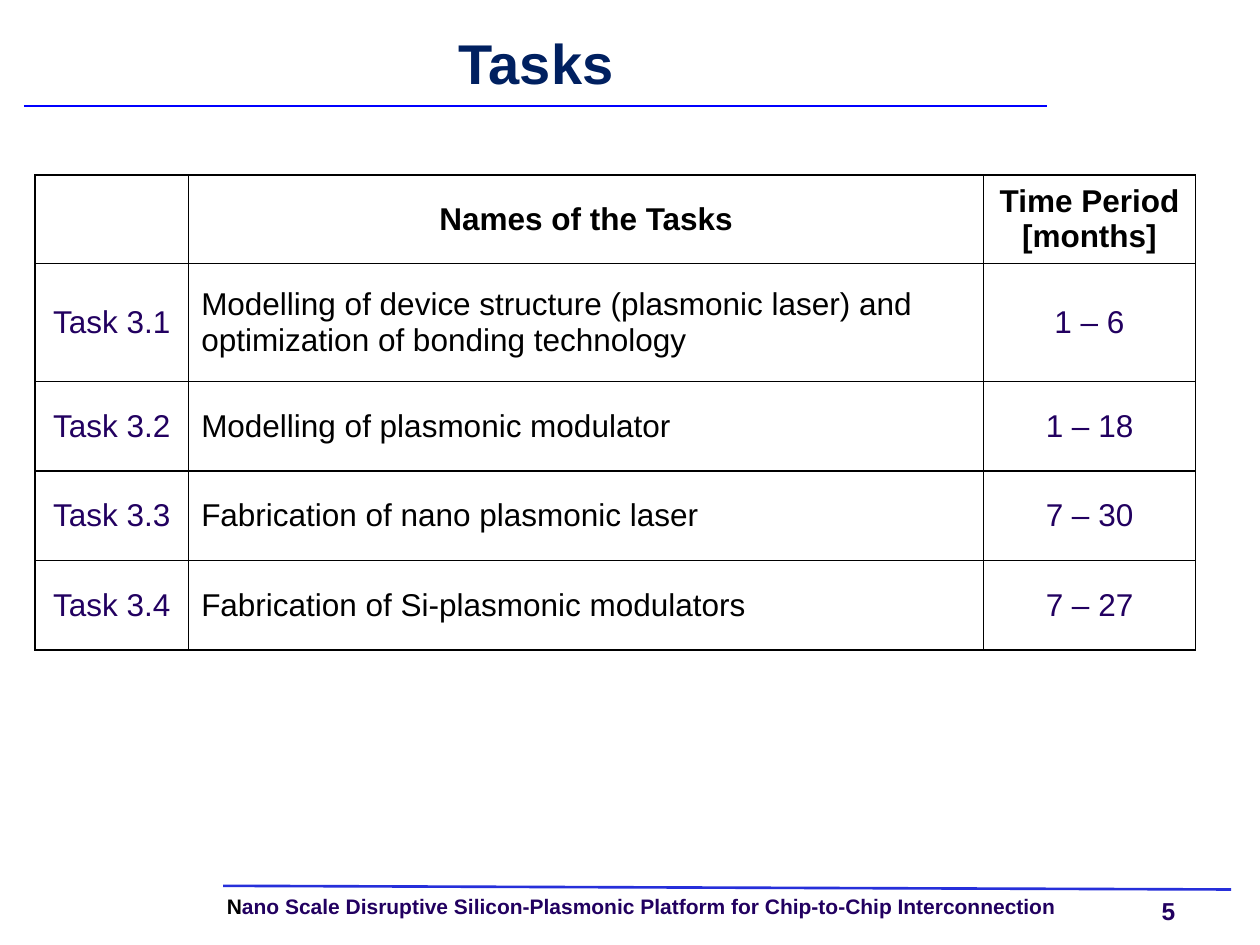
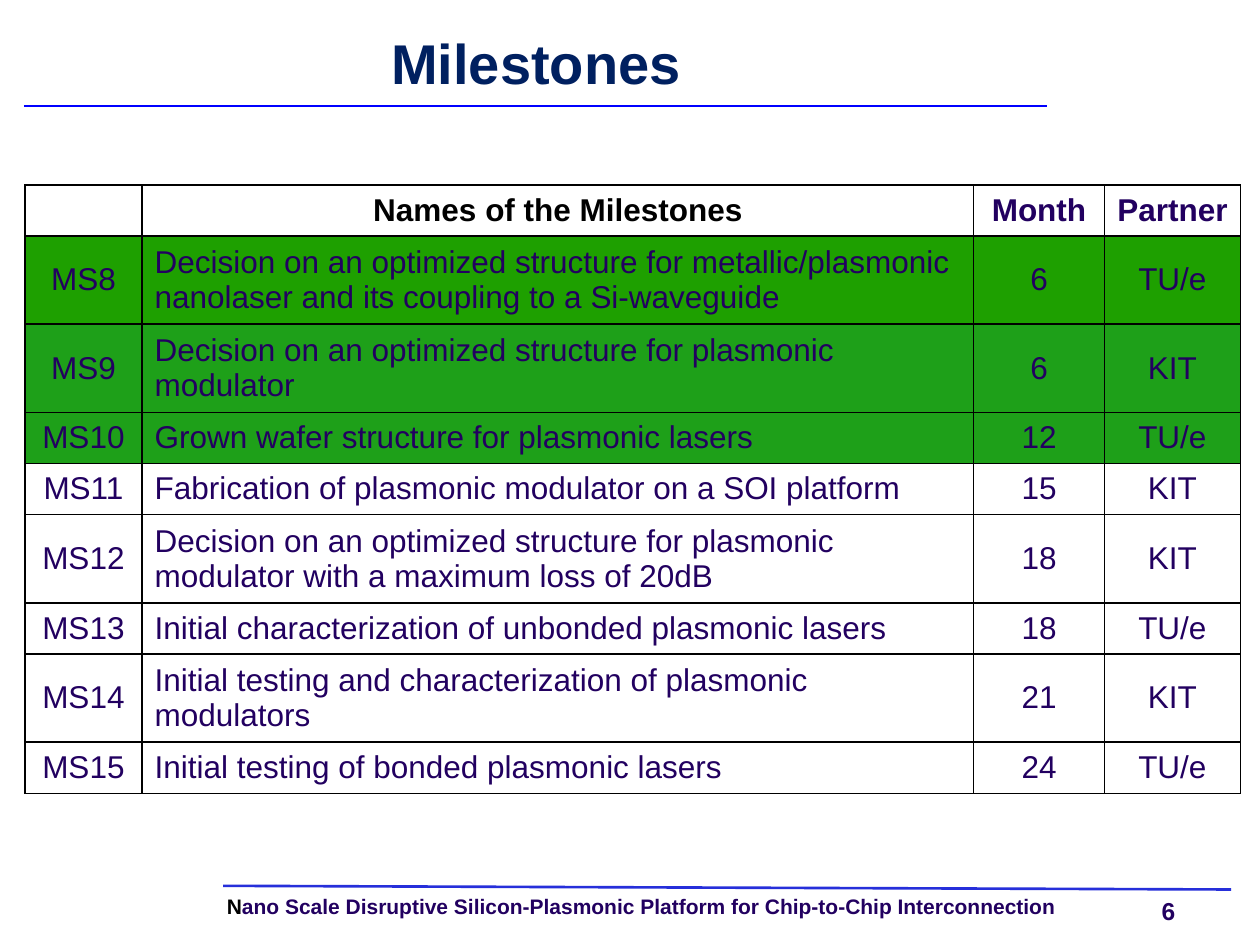
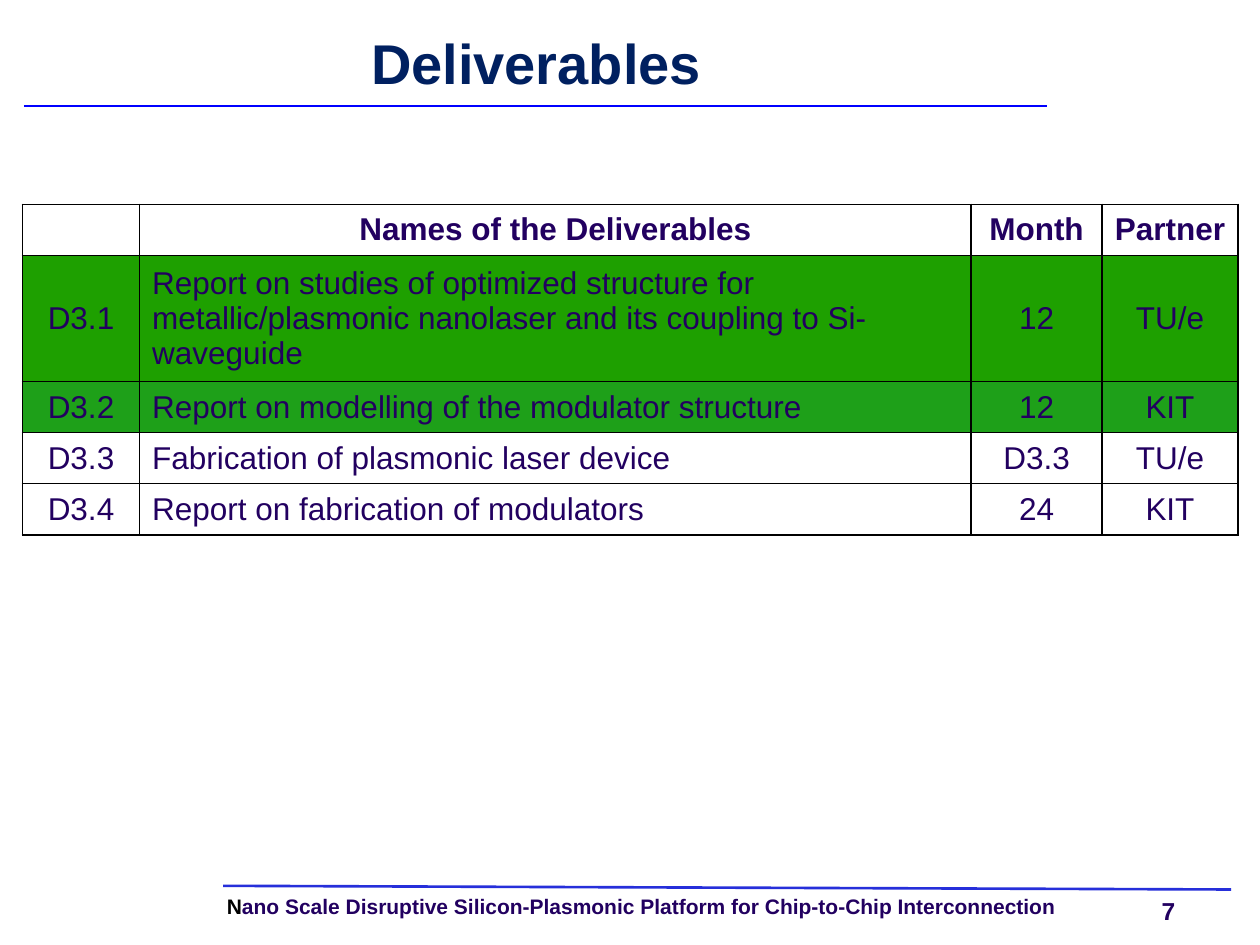
from dataclasses import dataclass

from lxml.etree import SubElement
from pptx import Presentation
from pptx.dml.color import RGBColor as RGB
from pptx.enum.shapes import MSO_CONNECTOR as CONN
from pptx.enum.text import MSO_ANCHOR as ANCHOR, MSO_AUTO_SIZE as AUTO, PP_ALIGN as ALIGN
from pptx.oxml.ns import qn
from pptx.util import Pt


@dataclass(frozen=True)
class Theme:
    font: str = "Arial"
    title: str = "002060"
    ink: str = "220060"
    black: str = "000000"
    title_rule: str = "0000FF"
    footer_rule: str = "262FDA"
    done: str = "1EA000"
    done_alt: str = "1EA019"
    title_size: int = 32
    table_size: int = 18
    footer_size: int = 12
    number_size: int = 14


T = Theme()
FOOTER = ("N", "ano Scale Disruptive Silicon-Plasmonic Platform for Chip-to-Chip Interconnection")
RULES = [
    (127.5, 506.2, 703.5, 508.3, T.footer_rule),
    (13.7, 60.5, 598.3, 60.5, T.title_rule),
]
REPORT_COLS = [67, 475.2, 74.7, 77.8]

slides = [
    dict(
        title="Tasks", left=20, top=100, cols=[87.8, 454.3, 121],
        heights=[33.8, 67.7, 51.1, 51.1, 51.1],
        head_colors=[T.black] * 3, name_color=T.black, fills=[],
        rows=[
            ("", "Names of the Tasks", "Time Period [months]"),
            ("Task 3.1", "Modelling of device structure (plasmonic laser) and optimization of bonding technology", "1 – 6"),
            ("Task 3.2", "Modelling of plasmonic modulator", "1 – 18"),
            ("Task 3.3", "Fabrication of nano plasmonic laser", "7 – 30"),
            ("Task 3.4", "Fabrication of Si-plasmonic modulators", "7 – 27"),
        ],
    ),
    dict(
        title="Milestones", left=14.2, top=105.6, cols=REPORT_COLS,
        heights=[29.2] * 9,
        head_colors=[T.ink, T.black, T.ink, T.ink], name_color=T.ink,
        fills=[T.done, T.done_alt, T.done_alt],
        rows=[
            ("", "Names of the Milestones", "Month", "Partner"),
            ("MS8", "Decision on an optimized structure for metallic/plasmonic nanolaser and its coupling to a Si-waveguide", "6", "TU/e"),
            ("MS9", "Decision on an optimized structure for plasmonic modulator", "6", "KIT"),
            ("MS10", "Grown wafer structure for plasmonic lasers", "12", "TU/e"),
            ("MS11", "Fabrication of plasmonic modulator on a SOI platform", "15", "KIT"),
            ("MS12", "Decision on an optimized structure for plasmonic modulator with a maximum loss of 20dB", "18", "KIT"),
            ("MS13", "Initial characterization of unbonded plasmonic lasers", "18", "TU/e"),
            ("MS14", "Initial testing and characterization of plasmonic modulators", "21", "KIT"),
            ("MS15", "Initial testing of bonded plasmonic lasers", "24", "TU/e"),
        ],
    ),
    dict(
        title="Deliverables", left=12.8, top=116.8, cols=REPORT_COLS,
        heights=[29.2] * 5,
        head_colors=[T.ink] * 4, name_color=T.ink,
        fills=[T.done, T.done_alt],
        rows=[
            ("", "Names of the Deliverables", "Month", "Partner"),
            ("D3.1", "Report on studies of optimized structure for metallic/plasmonic nanolaser and its coupling to Si-waveguide", "12", "TU/e"),
            ("D3.2", "Report on modelling of the modulator structure", "12", "KIT"),
            ("D3.3", "Fabrication of plasmonic laser device", "D3.3", "TU/e"),
            ("D3.4", "Report on fabrication of modulators", "24", "KIT"),
        ],
    ),
]


def style(r, size, color, bold=True):
    r.font.name = T.font
    r.font.size = Pt(size)
    r.font.bold = bold
    r.font.color.rgb = RGB.from_string(color)


def set_frame(tf, wrap=True):
    tf.margin_left = tf.margin_right = tf.margin_top = tf.margin_bottom = 0
    tf.word_wrap = wrap
    return tf.paragraphs[0]


prs = Presentation()
prs.slide_width, prs.slide_height = Pt(720), Pt(540)

for number, data in enumerate(slides, 5):
    s = prs.slides.add_slide(prs.slide_layouts[5])

    sp = s.shapes.title
    sp.left, sp.top, sp.width, sp.height = Pt(14.4), Pt(14.4), Pt(584), Pt(48.2)
    sp.text_frame.text = data["title"]
    sp.text_frame.auto_size = AUTO.NONE
    sp.text_frame.vertical_anchor = ANCHOR.MIDDLE
    p = set_frame(sp.text_frame)
    p.alignment = ALIGN.CENTER
    p.line_spacing = Pt(32)
    style(p.runs[0], T.title_size, T.title)

    for x1, y1, x2, y2, color in RULES:
        line = s.shapes.add_connector(CONN.STRAIGHT, Pt(x1), Pt(y1), Pt(x2), Pt(y2))
        line.line.color.rgb = RGB.from_string(color)
        line.line.width = Pt(1.5)
        SubElement(line._element.spPr, qn("a:effectLst"))

    sp = s.shapes.add_textbox(Pt(129.6), Pt(512), Pt(514), Pt(13))
    p = set_frame(sp.text_frame)
    p.line_spacing = 0.9
    for text, color in zip(FOOTER, (T.black, T.ink)):
        r = p.add_run()
        r.text = text
        style(r, T.footer_size, color)

    sp = s.shapes.add_textbox(Pt(663.8), Pt(512), Pt(28.8), Pt(16.6))
    sp.text_frame.text = str(number)
    p = set_frame(sp.text_frame, wrap=False)
    style(p.runs[0], T.number_size, T.ink)

    rows, cols, heights = data["rows"], data["cols"], data["heights"]
    table = s.shapes.add_table(len(rows), len(cols), Pt(data["left"]), Pt(data["top"]),
                               Pt(sum(cols)), Pt(sum(heights))).table
    table.first_row = table.horz_banding = False
    for col, width in zip(table.columns, cols):
        col.width = Pt(width)
    for row, height in zip(table.rows, heights):
        row.height = Pt(height)

    for i, texts in enumerate(rows):
        for j, text in enumerate(texts):
            cell = table.cell(i, j)
            cell.vertical_anchor = ANCHOR.MIDDLE
            tcPr = cell._tc.get_or_add_tcPr()
            for side in ("lnL", "lnR", "lnT", "lnB"):
                ln = SubElement(tcPr, qn("a:" + side), w=str(Pt(1)))
                fill = SubElement(ln, qn("a:solidFill"))
                SubElement(fill, qn("a:srgbClr"), val=T.black)
            if 1 <= i <= len(data["fills"]):
                cell.fill.solid()
                cell.fill.fore_color.rgb = RGB.from_string(data["fills"][i - 1])
            else:
                cell.fill.background()
            if not text:
                continue
            cell.text_frame.text = text
            p = cell.text_frame.paragraphs[0]
            p.alignment = ALIGN.LEFT if i and j == 1 else ALIGN.CENTER
            if i == 0:
                color = data["head_colors"][j]
            else:
                color = data["name_color"] if j == 1 else T.ink
            style(p.runs[0], T.table_size, color, bold=i == 0)

prs.save("out.pptx")
